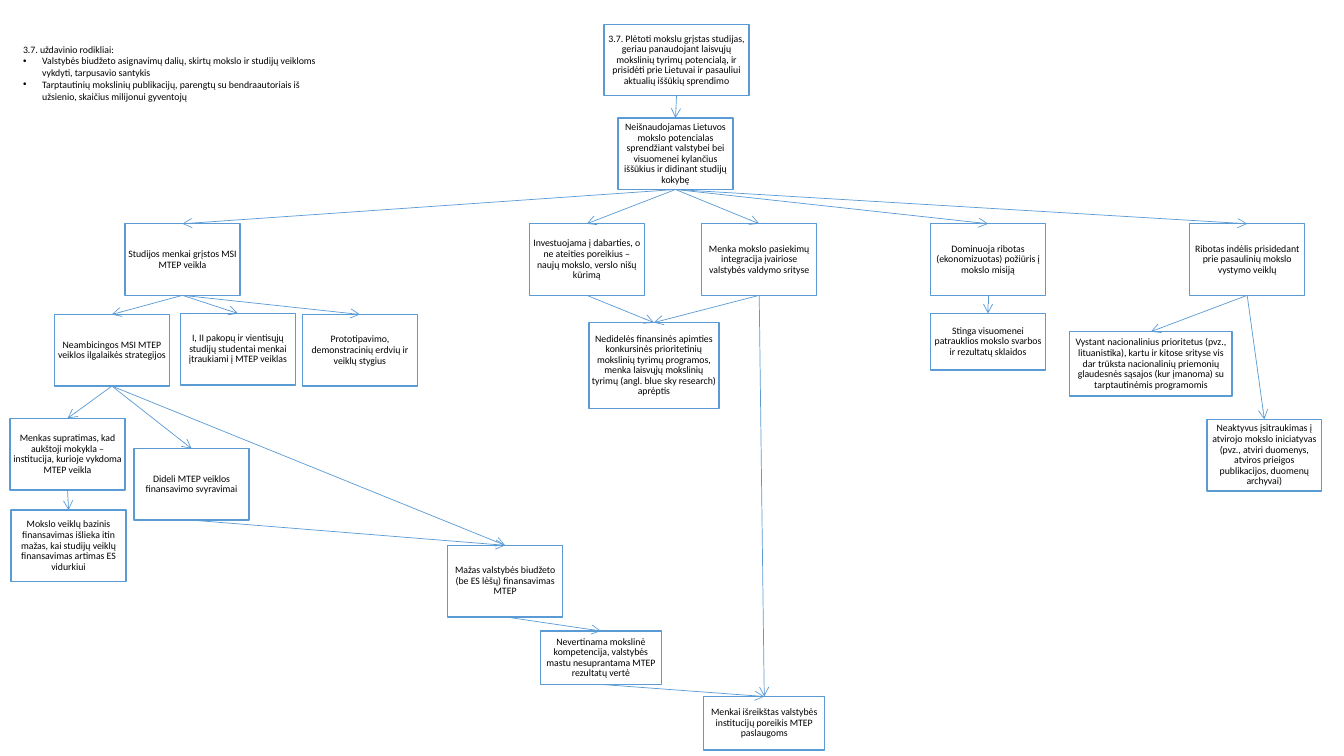
from lxml import etree
from pptx import Presentation
from pptx.dml.color import RGBColor
from pptx.enum import shapes, text
from pptx.oxml.ns import qn
from pptx.util import Inches, Pt

COLORS = {"fill": "FFFFFF", "line": "5B9BD5", "text": "000000"}
FONT = {"name": "Calibri", "size": Pt(7)}
BOX = (1.14, 0.71)
SMALL = (1.2, 0.53)

# key: (left, top, (width, height), wording)
CAUSES = {
    "goal": (5.99, 0.24, (1.44, 0.71), "3.7. Plėtoti mokslu grįstas studijas, geriau panaudojant laisvųjų mokslinių tyrimų potencialą, ir prisidėti prie Lietuvai ir pasauliui aktualių iššūkių sprendimo"),
    "problem": (6.13, 1.17, BOX, "Neišnaudojamas Lietuvos mokslo potencialas sprendžiant valstybei bei visuomenei kylančius iššūkius ir didinant studijų kokybę"),
    "studies": (1.24, 2.22, BOX, "Studijos menkai grįstos MSI MTEP veikla"),
    "strategy": (0.54, 3.12, BOX, "Neambicingos MSI MTEP veiklos ilgalaikės strategijos"),
    "swings": (1.33, 4.45, BOX, "Dideli MTEP veiklos finansavimo svyravimai"),
    "concept": (0.1, 4.15, BOX, "Menkas supratimas, kad aukštoji mokykla – institucija, kurioje vykdoma MTEP veikla"),
    "base": (0.11, 5.06, BOX, "Mokslo veiklų bazinis finansavimas išlieka itin mažas, kai studijų veiklų finansavimas artimas ES vidurkiui"),
    "present": (5.25, 2.22, BOX, "Investuojama į dabarties, o ne ateities poreikius – naujų mokslo, verslo nišų kūrimą"),
    "programmes": (5.84, 3.2, (1.29, 0.85), "Nedidelės finansinės apimties konkursinės prioritetinių mokslinių tyrimų programos, menka laisvųjų mokslinių tyrimų (angl. blue sky research) aprėptis"),
    "integration": (6.96, 2.22, BOX, "Menka mokslo pasiekimų integracija įvairiose valstybės valdymo srityse"),
    "mission": (9.23, 2.22, BOX, "Dominuoja ribotas (ekonomizuotas) požiūris į mokslo misiją"),
    "outreach": (9.23, 3.11, (1.14, 0.56), "Stinga visuomenei patrauklios mokslo svarbos ir rezultatų sklaidos"),
    "global": (11.8, 2.22, BOX, "Ribotas indėlis prisidedant prie pasaulinių mokslo vystymo veiklų"),
    "priorities": (10.61, 3.29, (1.61, 0.64), "Vystant nacionalinius prioritetus (pvz., lituanistika), kartu ir kitose srityse vis dar trūksta nacionalinių priemonių glaudesnės sąsajos (kur įmanoma) su tarptautinėmis programomis"),
    "open": (11.97, 4.16, BOX, "Neaktyvus įsitraukimas į atvirojo mokslo iniciatyvas (pvz., atviri duomenys, atviros prieigos publikacijos, duomenų archyvai)"),
    "students": (1.79, 3.11, BOX, "I, II pakopų ir vientisųjų studijų studentai menkai įtraukiami į MTEP veiklas"),
    "budget": (4.44, 5.41, BOX, "Mažas valstybės biudžeto (be ES lėšų) finansavimas MTEP"),
    "competence": (5.36, 6.26, SMALL, "Nevertinama mokslinė kompetencija, valstybės mastu nesuprantama MTEP rezultatų vertė"),
    "demand": (6.98, 6.91, SMALL, "Menkai išreikštas valstybės institucijų poreikis MTEP paslaugoms"),
    "prototypes": (3, 3.12, BOX, "Prototipavimo, demonstracinių erdvių ir veiklų stygius"),
}
ARROWS = {
    "goal": ["problem"],
    "problem": ["studies", "present", "integration", "mission", "global"],
    "studies": ["strategy", "students", "prototypes"],
    "strategy": ["swings", "concept", "budget"],
    "concept": ["base"],
    "swings": ["budget"],
    "budget": ["competence"],
    "competence": ["demand"],
    "present": ["programmes"],
    "integration": ["programmes", "demand"],
    "mission": ["outreach"],
    "global": ["priorities", "open"],
}
INDICATORS_TITLE = "3.7. uždavinio rodikliai:"
INDICATORS = [
    "Valstybės biudžeto asignavimų dalių, skirtų mokslo ir studijų veikloms vykdyti, tarpusavio santykis",
    "Tarptautinių mokslinių publikacijų, parengtų su bendraautoriais iš užsienio, skaičius milijonui gyventojų",
]
BOTTOM, TOP = 2, 0  # connection sites of a rectangle


def rgb(name):
    return RGBColor.from_string(COLORS[name])


def set_all(obj, values):
    for name, value in values.items():
        setattr(obj, name, value)


def write(p, wording):
    r = p.add_run()
    r.text = wording
    set_all(r.font, FONT)
    r.font.color.rgb = rgb("text")


def add_box(s, left, top, size, wording):
    sp = s.shapes.add_shape(shapes.MSO_SHAPE.RECTANGLE, *map(Inches, (left, top, *size)))
    sp.shadow.inherit = False
    sp.fill.solid()
    sp.fill.fore_color.rgb = rgb("fill")
    sp.line.color.rgb = rgb("line")
    sp.line.width = Pt(1)
    inset = Inches(0.02 if size == SMALL else 0.03)
    tf = sp.text_frame
    set_all(tf, {"word_wrap": True, "vertical_anchor": text.MSO_ANCHOR.MIDDLE,
                 "margin_left": inset, "margin_right": inset,
                 "margin_top": inset, "margin_bottom": inset})
    p = tf.paragraphs[0]
    set_all(p, {"alignment": text.PP_ALIGN.CENTER, "line_spacing": 0.9})
    write(p, wording)
    return sp


def add_arrow(s, cause, effect):
    c = s.shapes.add_connector(shapes.MSO_CONNECTOR.STRAIGHT, 0, 0, 0, 0)
    c.begin_connect(cause, BOTTOM)
    c.end_connect(effect, TOP)
    c.line.color.rgb = rgb("line")
    c.line.width = Pt(0.5)
    etree.SubElement(c.line._get_or_add_ln(), qn("a:tailEnd"), type="arrow")
    etree.SubElement(c._element.spPr, qn("a:effectLst"))


def add_indicators(s):
    sp = s.shapes.add_textbox(*map(Inches, (0.13, 0.15, 3.28, 0.93)))
    tf = sp.text_frame
    set_all(tf, {"word_wrap": True, "margin_top": Inches(0.28)})
    write(tf.paragraphs[0], INDICATORS_TITLE)
    for wording in INDICATORS:
        p = tf.add_paragraph()
        write(p, wording)
        pPr = p._p.get_or_add_pPr()
        pPr.set("marL", str(Inches(0.19)))
        pPr.set("indent", str(-Inches(0.19)))
        etree.SubElement(pPr, qn("a:buFont"), typeface="Arial")
        etree.SubElement(pPr, qn("a:buChar"), char="•")


def main():
    prs = Presentation()
    set_all(prs, {"slide_width": Inches(13.33), "slide_height": Inches(7.5)})
    s = prs.slides.add_slide(prs.slide_layouts[6])
    boxes = {key: add_box(s, *cause) for key, cause in CAUSES.items()}
    for cause, effects in ARROWS.items():
        for effect in effects:
            add_arrow(s, boxes[cause], boxes[effect])
    add_indicators(s)
    prs.save("out.pptx")


if __name__ == "__main__":
    main()
